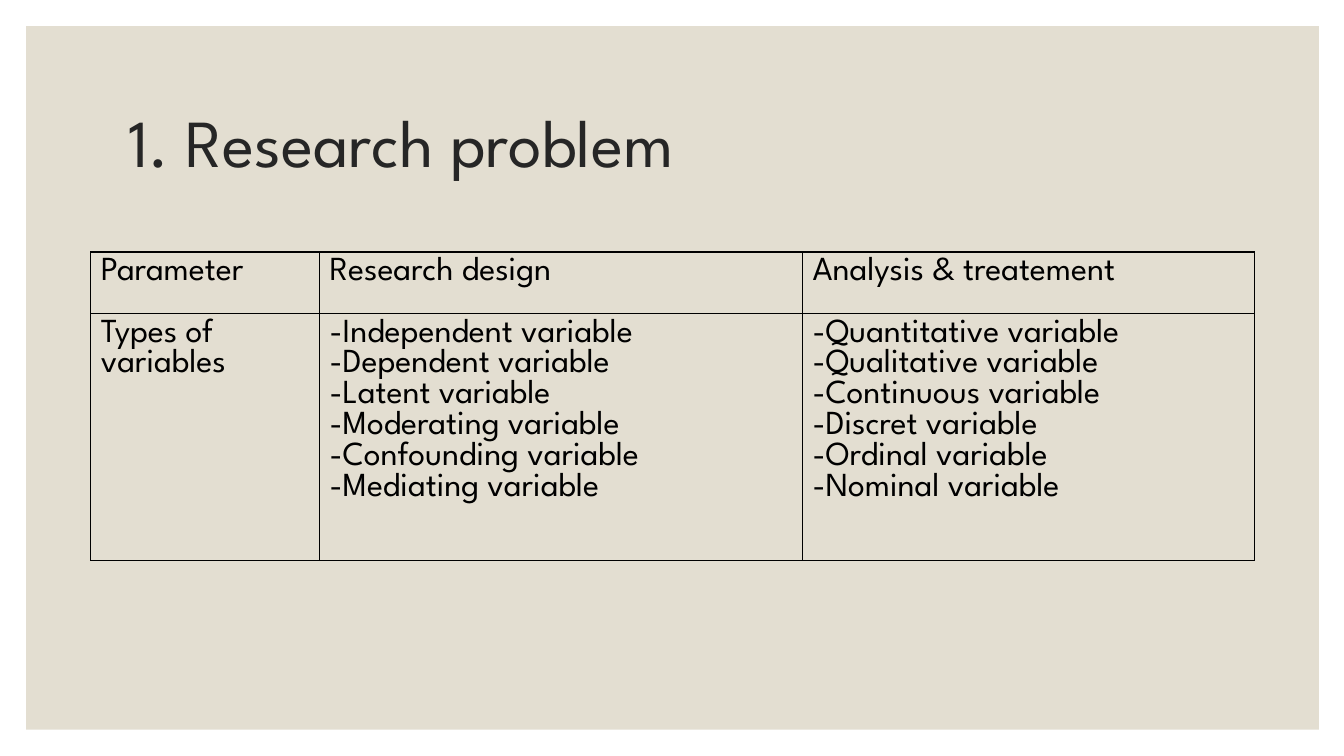
from dataclasses import dataclass

import lxml.etree
import pptx
import pptx.dml.color
import pptx.enum.shapes
import pptx.enum.text
import pptx.oxml.ns
import pptx.util

PX = 9144  # EMU: 100 px to the inch
TITLE_ONLY = 5


@dataclass(frozen=True)
class Theme:
    font: str = "League Spartan"
    panel: str = "E3DED1"
    title: str = "262626"
    ink: str = "000000"
    title_size: int = 48
    table_size: int = 24
    border_width: int = 1


THEME = Theme()

COLUMN_WIDTHS = [227, 479, 448]
ROW_HEIGHTS = [61, 245]
ROWS = [
    [["Parameter"], ["Research design"], ["Analysis & treatement"]],
    [
        ["Types of variables"],
        [f"-{kind} variable" for kind in
         ("Independent", "Dependent", "Latent", "Moderating", "Confounding", "Mediating")],
        [f"-{kind} variable" for kind in
         ("Quantitative", "Qualitative", "Continuous", "Discret", "Ordinal", "Nominal")],
    ],
]


def emu(box):
    return [length * PX for length in box]


def rgb(colour):
    return pptx.dml.color.RGBColor.from_string(colour)


def set_font(paragraph, size, colour):
    paragraph.font.name = THEME.font
    paragraph.font.size = pptx.util.Pt(size)
    paragraph.font.color.rgb = rgb(colour)


def add_panel(slide, box):
    """Fill the box with the background colour, behind the title."""
    panel = slide.shapes.add_shape(pptx.enum.shapes.MSO_SHAPE.RECTANGLE, *emu(box))
    panel.shadow.inherit = False
    panel.fill.solid()
    panel.fill.fore_color.rgb = rgb(THEME.panel)
    panel.line.fill.background()
    slide.shapes.title.element.addprevious(panel.element)


def format_title(slide, box, text):
    title = slide.shapes.title
    title.left, title.top, title.width, title.height = emu(box)
    frame = title.text_frame
    frame.text = text
    frame.word_wrap = True
    frame.vertical_anchor = pptx.enum.text.MSO_ANCHOR.MIDDLE
    paragraph = frame.paragraphs[0]
    paragraph.alignment = pptx.enum.text.PP_ALIGN.LEFT
    paragraph.line_spacing = 0.9
    set_font(paragraph, THEME.title_size, THEME.title)


def add_borders(cell):
    qn = pptx.oxml.ns.qn
    properties = cell._tc.get_or_add_tcPr()
    width = str(pptx.util.Pt(THEME.border_width))
    for side in ("lnL", "lnR", "lnT", "lnB"):
        line = lxml.etree.SubElement(properties, qn(f"a:{side}"), w=width)
        fill = lxml.etree.SubElement(line, qn("a:solidFill"))
        lxml.etree.SubElement(fill, qn("a:srgbClr"), val=THEME.ink)


def add_variable_table(slide, box):
    table = slide.shapes.add_table(len(ROWS), len(COLUMN_WIDTHS), *emu(box)).table
    table.first_row = False
    table.horz_banding = False
    for column, width in zip(table.columns, COLUMN_WIDTHS):
        column.width = width * PX
    for row, height, contents in zip(table.rows, ROW_HEIGHTS, ROWS):
        row.height = height * PX
        for cell, lines in zip(row.cells, contents):
            add_borders(cell)
            cell.fill.background()
            cell.text = "\n".join(lines)
            for paragraph in cell.text_frame.paragraphs:
                set_font(paragraph, THEME.table_size, THEME.ink)


def add_research_slide(presentation):
    slide = presentation.slides.add_slide(presentation.slide_layouts[TITLE_ONLY])
    add_panel(slide, (26, 26, 1282, 698))
    format_title(slide, (117, 70, 1100, 150), "1. Research problem")
    add_variable_table(slide, (90, 250, sum(COLUMN_WIDTHS), sum(ROW_HEIGHTS)))


def main():
    presentation = pptx.Presentation()
    presentation.slide_width, presentation.slide_height = emu((1333, 750))
    add_research_slide(presentation)
    presentation.save("out.pptx")


if __name__ == "__main__":
    main()
